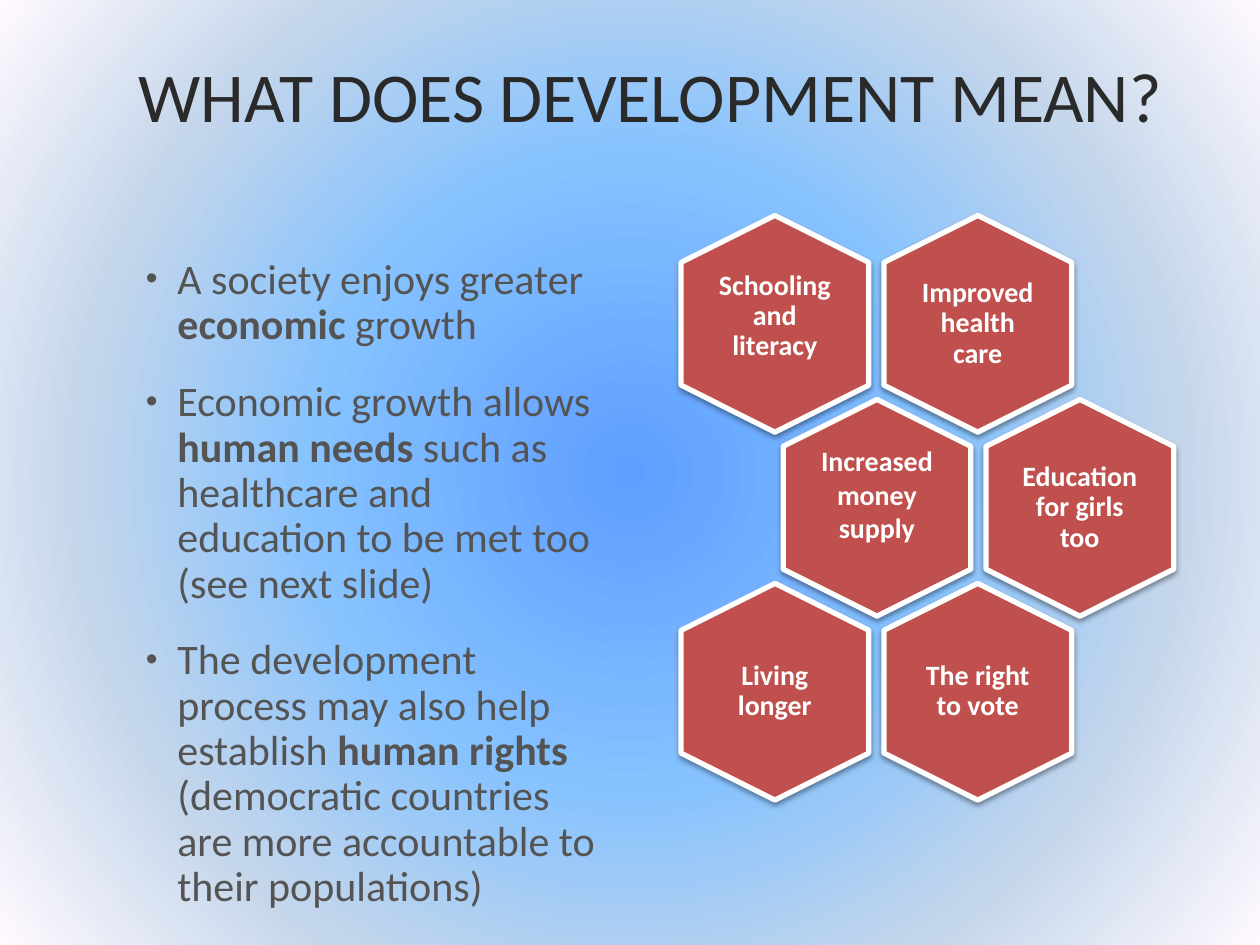
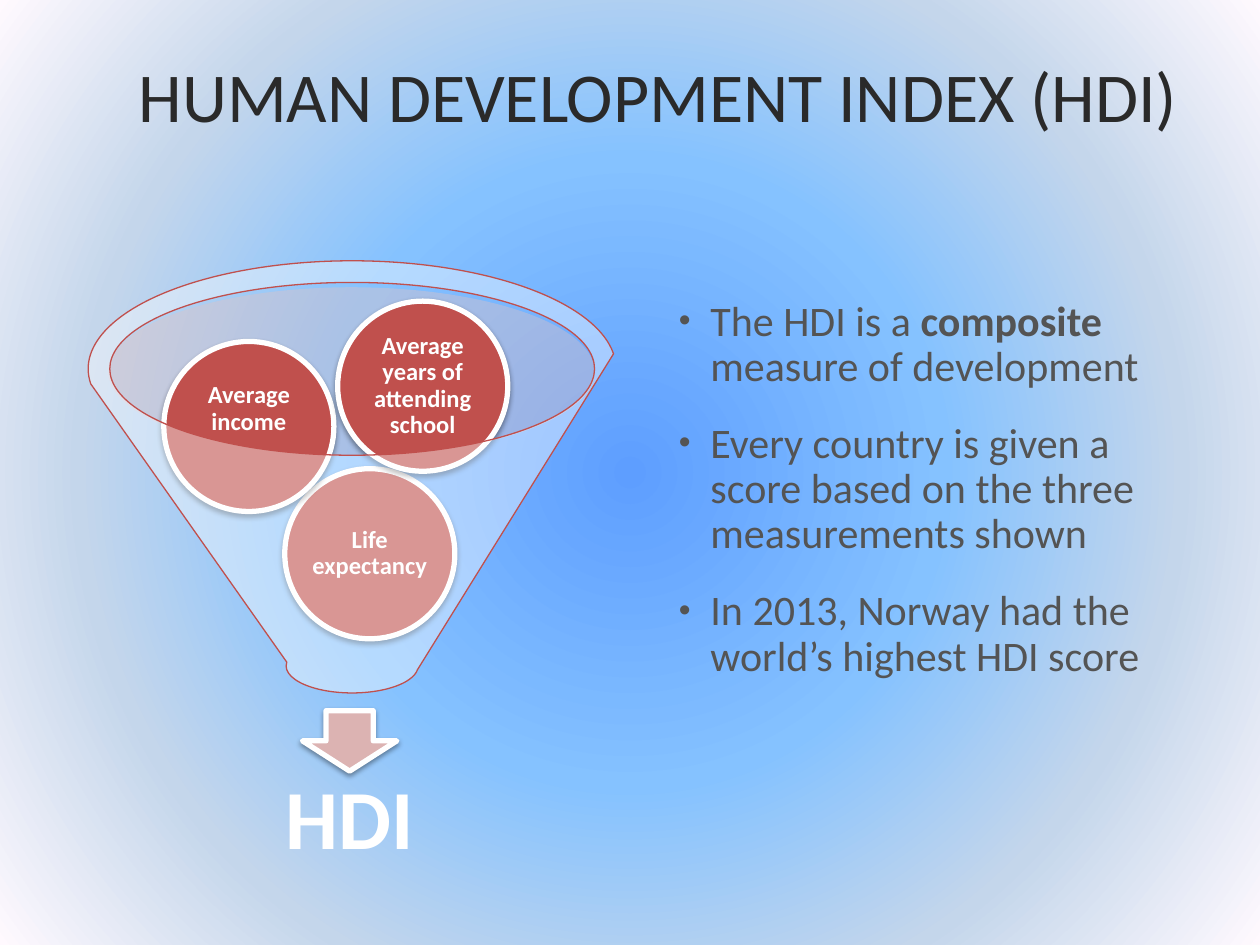
from lxml.etree import SubElement
from pptx import Presentation
from pptx.dml.color import RGBColor
from pptx.enum.shapes import MSO_SHAPE
from pptx.enum.text import MSO_ANCHOR, MSO_AUTO_SIZE, PP_ALIGN
from pptx.oxml import parse_xml
from pptx.oxml.ns import nsdecls, qn
from pptx.util import Inches, Pt

FONT = "Calibri"
C = {"title": "2A2A2A", "body": "545454", "white": "FFFFFF", "red": "C0504D",
     "arrow": "DCB3B2", "rim": "E2C2C2", "shadow": "000000"}
STOPS = [(0, "5E9EFF", 100), (40, "85C2FF", 100), (70, "C4D6EB", 100), (100, "FFF9FE", 83)]


def add_shape(s, kind, box, fill, line=None, width=3, alpha=None, shadow=True):
    sp = s.shapes.add_shape(kind, *[Inches(v) for v in box])
    sp.shadow.inherit = False
    sp.fill.solid()
    sp.fill.fore_color.rgb = RGBColor.from_string(C[fill])
    if line:
        sp.line.color.rgb = RGBColor.from_string(C[line])
        sp.line.width = Pt(width)
    else:
        sp.line.fill.background()
    spPr = sp._element.spPr
    if alpha:
        clr = spPr.find(qn("a:solidFill"))[0]
        SubElement(clr, qn("a:alpha"), val=str(alpha * 1000))
    if shadow:
        shdw = SubElement(spPr.find(qn("a:effectLst")), qn("a:outerShdw"), blurRad=str(Pt(3.1)),
                          dist=str(Pt(1.6)), dir="5400000", rotWithShape="0")
        clr = SubElement(shdw, qn("a:srgbClr"), val=C["shadow"])
        SubElement(clr, qn("a:alpha"), val="38000")
    return sp


def write_label(sp, text, size, inset=0, bottom=0, spacing=0.9):
    tf = sp.text_frame
    tf.word_wrap = True
    tf.vertical_anchor = MSO_ANCHOR.MIDDLE
    tf.margin_left = tf.margin_right = tf.margin_top = Inches(inset)
    tf.margin_bottom = Inches(bottom)
    p = tf.paragraphs[0]
    p.text = text
    p.alignment = PP_ALIGN.CENTER
    p.line_spacing = spacing
    f = p.runs[0].font
    f.name, f.size, f.bold = FONT, Pt(size), True
    f.color.rgb = RGBColor.from_string(C["white"])


prs = Presentation()
prs.slide_width, prs.slide_height = Inches(10), Inches(7.5)

master = prs.slide_master
master.background.fill.solid()
solid = master._element.find(".//" + qn("a:solidFill"))
stops = "".join(
    f'<a:gs pos="{pos * 1000}"><a:srgbClr val="{color}"><a:alpha val="{alpha * 1000}"/></a:srgbClr></a:gs>'
    for pos, color, alpha in STOPS)
solid.getparent().replace(solid, parse_xml(
    f'<a:gradFill {nsdecls("a")} rotWithShape="1"><a:gsLst>{stops}</a:gsLst><a:path path="circle">'
    '<a:fillToRect l="50000" t="50000" r="50000" b="50000"/></a:path></a:gradFill>'))

SLIDES = [
    ("WHAT DOES DEVELOPMENT MEAN?", (1.01, 2, 3.86, 4.75), [
        ["A society enjoys greater ", "economic", " growth"],
        ["Economic growth allows ", "human needs ",
         "such as healthcare and education to be met too (see next slide)"],
        ["The development process may also help establish ", "human rights ",
         "(democratic countries are more accountable to their populations)"]]),
    ("HUMAN DEVELOPMENT INDEX (HDI)", (5.24, 2.33, 4.17, 4.75), [
        ["The HDI is a ", "composite", " measure of development"],
        ["Every country is given a score based on the three measurements shown"],
        ["In 2013, Norway had the world’s highest HDI score"]]),
]

for title, box, bullets in SLIDES:
    s = prs.slides.add_slide(prs.slide_layouts[5])
    sp = s.shapes.title
    sp.left, sp.top, sp.width, sp.height = [Inches(v) for v in (1, 0.3, 8.65, 1.45)]
    tf = sp.text_frame
    tf.text = title
    tf.auto_size = MSO_AUTO_SIZE.NONE
    tf.vertical_anchor = MSO_ANCHOR.BOTTOM
    tf.margin_bottom = Inches(0.66)
    p = tf.paragraphs[0]
    p.alignment = PP_ALIGN.LEFT
    p.line_spacing = 0.9
    f = p.runs[0].font
    f.name, f.size = FONT, Pt(40)
    f.color.rgb = RGBColor.from_string(C["title"])

    tf = s.shapes.add_textbox(*[Inches(v) for v in box]).text_frame
    tf.word_wrap = True
    for i, parts in enumerate(bullets):
        p = tf.add_paragraph() if i else tf.paragraphs[0]
        p.line_spacing = 0.9
        p.space_before = Pt(18)
        pPr = p._p.get_or_add_pPr()
        pPr.set("marL", str(Inches(0.3)))
        pPr.set("indent", str(Inches(-0.25)))
        SubElement(SubElement(pPr, qn("a:buClr")), qn("a:srgbClr"), val=C["body"])
        SubElement(pPr, qn("a:buSzPct"), val="80000")
        SubElement(pPr, qn("a:buFont"), typeface="Arial")
        SubElement(pPr, qn("a:buChar"), char="•")
        for j, part in enumerate(parts):
            r = p.add_run()
            r.text = part
            r.font.name, r.font.size, r.font.bold = FONT, Pt(24), j == 1
            r.font.color.rgb = RGBColor.from_string(C["body"])

meaning, index = prs.slides

HEX_W, HEX_H = 1.72, 1.49
LABEL_W, LABEL_H = 1.03, 1.18
HEXAGONS = [
    (0, 0, "Schooling and literacy", 0.06, 0.9), (0, 1, "Improved health care", 0, 0.9),
    (1, 0, "Increased money supply", 0.11, 1), (1, 1, "Education for girls too", 0, 0.9),
    (2, 0, "Living longer", 0, 0.9), (2, 1, "The right to vote", 0, 0.9),
]
for row, col, text, lift, spacing in HEXAGONS:
    cx = 6.15 + col * 1.61 + row % 2 * 0.81
    cy = 2.57 + row * 1.46
    sp = add_shape(meaning, MSO_SHAPE.HEXAGON, (cx - HEX_W / 2, cy - HEX_H / 2, HEX_W, HEX_H),
                   "red", "white")
    sp.rotation = 90
    label = meaning.shapes.add_textbox(Inches(cx - LABEL_W / 2), Inches(cy - LABEL_H / 2 - lift),
                                       Inches(LABEL_W), Inches(LABEL_H))
    write_label(label, text, 16, 0.05, 0.05, spacing)

add_shape(index, MSO_SHAPE.OVAL, (0.86, 2.28, 3.86, 1.34), "rim", alpha=40, shadow=False)
add_shape(index, MSO_SHAPE.DOWN_ARROW, (2.4, 5.64, 0.75, 0.48), "arrow", "white")
label = index.shapes.add_textbox(Inches(0.98), Inches(6.08), Inches(3.59), Inches(0.9))
write_label(label, "HDI", 48)

BALL = 1.35
for x, y, text, bottom in [(2.26, 3.72, "Life expectancy", 0), (1.3, 2.71, "Average income", 0.28),
                           (2.68, 2.39, "Average years of attending school", 0)]:
    sp = add_shape(index, MSO_SHAPE.OVAL, (x, y, BALL, BALL), "red", "white")
    write_label(sp, text, 14, bottom=bottom)
add_shape(index, MSO_SHAPE.FUNNEL, (0.7, 2.07, 4.19, 3.43), "white", "red", 0.75, 40, False)

prs.save("out.pptx")
